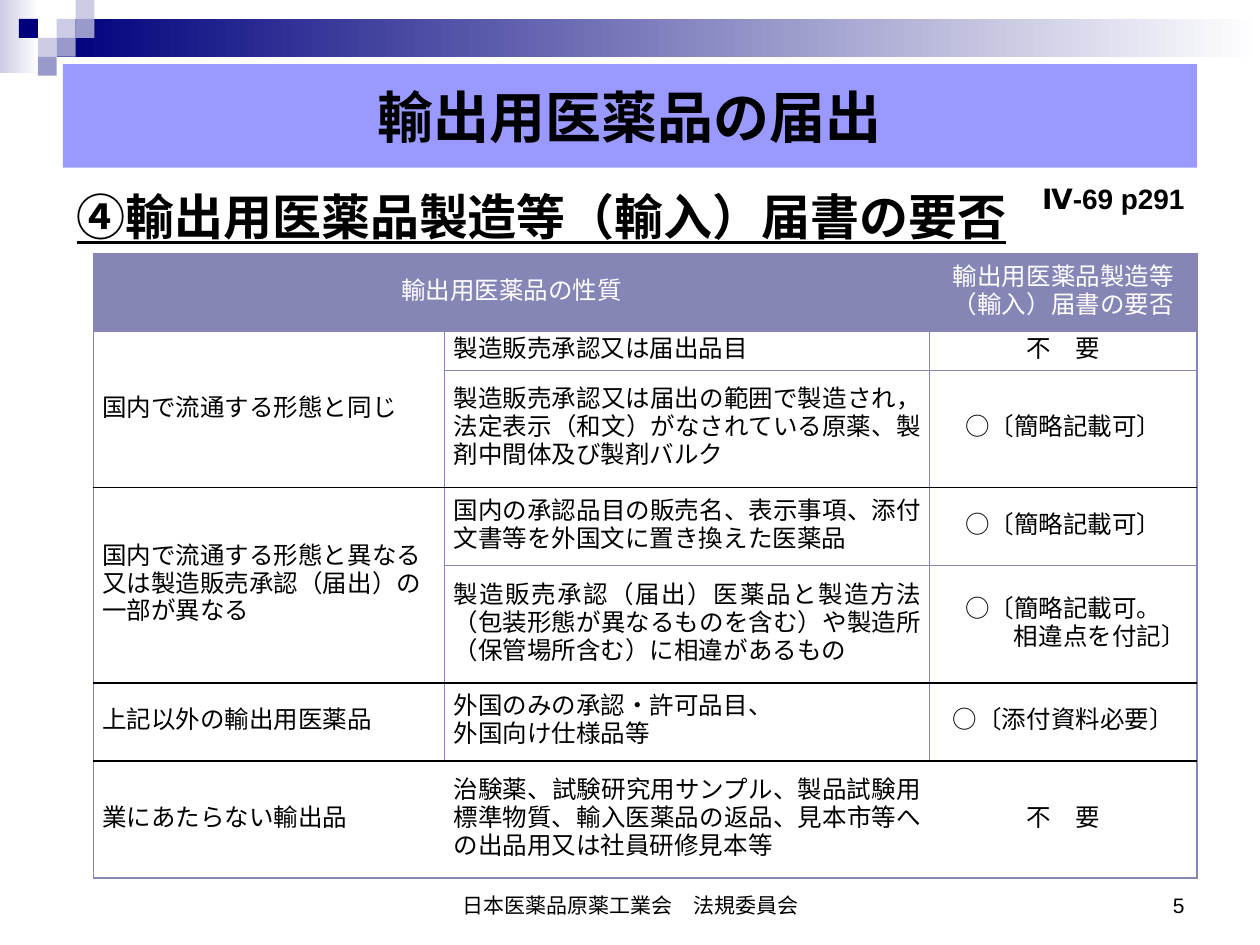
from lxml import etree
from pptx import Presentation
from pptx.dml.color import RGBColor
from pptx.enum.shapes import MSO_SHAPE as Shape
from pptx.enum.text import MSO_ANCHOR as Anchor, PP_ALIGN as Align
from pptx.oxml.ns import qn
from pptx.util import Inches, Pt

COLORS = {"navy": "00007D", "pale": "CCCCE6", "mid": "9999CC", "title": "9999FF",
          "grid": "8686B6", "black": "000000", "white": "FFFFFF"}
JP = "Noto Sans CJK JP"
LEFT, CENTER, RIGHT, JUSTIFY = Align.LEFT, Align.CENTER, Align.RIGHT, Align.JUSTIFY
ROW_HEIGHTS = [0.62, 0.31, 0.93, 0.62, 0.93, 0.62, 0.93]
COL_WIDTHS = [2.79, 3.85, 2.12]
GROUP_ENDS = (3, 5, 6)
HANGING = "相違点を付記〕"
ROWS = [
    ("輸出用医薬品の性質", "", "輸出用医薬品製造等（輸入）届書の要否"),
    ("国内で流通する形態と同じ", "製造販売承認又は届出品目", "不　要"),
    ("", "製造販売承認又は届出の範囲で製造され，法定表示（和文）がなされている原薬、製剤中間体及び製剤バルク",
     "○〔簡略記載可〕"),
    ("国内で流通する形態と異なる又は製造販売承認（届出）の一部が異なる",
     "国内の承認品目の販売名、表示事項、添付文書等を外国文に置き換えた医薬品", "○〔簡略記載可〕"),
    ("", "製造販売承認（届出）医薬品と製造方法（包装形態が異なるものを含む）や製造所（保管場所含む）に相違があるもの",
     "○〔簡略記載可。\n" + HANGING),
    ("上記以外の輸出用医薬品", "外国のみの承認・許可品目、\n外国向け仕様品等", "○〔添付資料必要〕"),
    ("業にあたらない輸出品",
     "治験薬、試験研究用サンプル、製品試験用標準物質、輸入医薬品の返品、見本市等への出品用又は社員研修見本等", "不　要"),
]


def rgb(name):
    """Return a named colour."""
    return RGBColor.from_string(COLORS[name])


def write(tf, text, size, color="black", font="Arial", bold=False, underline=False,
          align=LEFT, spacing=None, before=0):
    """Fill a text frame, one paragraph for each line of text."""
    tf.word_wrap = True
    for i, line in enumerate(text.split("\n")):
        p = tf.add_paragraph() if i else tf.paragraphs[0]
        p.alignment, p.line_spacing, p.space_before = align, spacing, Pt(before)
        r = p.add_run()
        r.text = line
        r.font.size, r.font.name = Pt(size), font
        r.font.bold, r.font.underline = bold, underline
        r.font.color.rgb = rgb(color)
        etree.SubElement(r.font._element, qn("a:ea"), typeface=JP)


def add_rect(s, x, y, w, h, color, fade=None):
    """Add a borderless rectangle, plain or fading to the right."""
    sp = s.shapes.add_shape(Shape.RECTANGLE, Inches(x), Inches(y), Inches(w), Inches(h))
    sp.shadow.inherit = False
    sp.line.fill.background()
    if fade:
        sp.fill.gradient()
        sp.fill.gradient_angle = 0
        for stop, name, pos in zip(sp.fill.gradient_stops, (color, fade), (0, 1)):
            stop.color.rgb, stop.position = rgb(name), pos
    else:
        sp.fill.solid()
        sp.fill.fore_color.rgb = rgb(color)
    return sp


def add_text(s, x, y, w, h, text, size, anchor=Anchor.TOP, **fmt):
    """Add a text box."""
    tf = s.shapes.add_textbox(Inches(x), Inches(y), Inches(w), Inches(h)).text_frame
    tf.vertical_anchor = anchor
    write(tf, text, size, **fmt)


def add_banner(s, x, y, w):
    """Draw the fading band and its checker of squares."""
    unit = 0.15
    add_rect(s, x, y, 0.31, 0.58, "pale", "white")
    add_rect(s, x + 3 * unit, y + unit, w - 3 * unit, 2 * unit, "navy", "white")
    squares = [(3, 1, "pale"), (4, 0, "pale"), (4, 1, "mid"), (2, 2, "pale"),
               (1, 1, "navy"), (3, 2, "mid"), (2, 3, "mid")]
    for col, row, color in squares:
        add_rect(s, x + col * unit, y + row * unit, unit, unit, color)


def add_heading(s, x, y, w):
    """Place the title bar, the subtitle and the page reference."""
    sp = add_rect(s, x, y, w, 0.82, "title")
    sp.text_frame.vertical_anchor = Anchor.MIDDLE
    write(sp.text_frame, "輸出用医薬品の届出", 32, bold=True, align=CENTER)
    add_text(s, x + 0.01, y + 1.01, w, 0.75, "④輸出用医薬品製造等（輸入）届書の要否", 28,
             bold=True, underline=True, spacing=0.8, before=5.6)
    add_text(s, x + w - 1.96, y + 0.93, 1.96, 0.32, "Ⅳ-69 p291", 16,
             bold=True, align=RIGHT, spacing=0.8, before=3.2)


def set_borders(cell, **sides):
    """Set the cell lines, each given as a colour name or None."""
    tc_pr = cell._tc.get_or_add_tcPr()
    for i, side in enumerate("LRTB"):
        color = sides[side]
        width = Pt(1 if color == "black" else 0.75)
        ln = etree.Element(qn("a:ln" + side), w=str(int(width)))
        if color:
            fill = etree.SubElement(ln, qn("a:solidFill"))
            etree.SubElement(fill, qn("a:srgbClr"), val=COLORS[color])
        else:
            etree.SubElement(ln, qn("a:noFill"))
        tc_pr.insert(i, ln)


def format_cell(cell, row, col, text):
    """Write one table cell with its fill and lines."""
    header, last = row == 0, row == len(ROWS) - 1
    cell.margin_left = cell.margin_right = Inches(0.07)
    cell.margin_top = cell.margin_bottom = 0
    cell.vertical_anchor = Anchor.MIDDLE
    if header:
        cell.fill.solid()
        cell.fill.fore_color.rgb = rgb("grid")
    else:
        cell.fill.background()
    if text:
        write(cell.text_frame, text, 14, "white" if header else "black", JP, spacing=Pt(16),
              align=CENTER if header else (LEFT, JUSTIFY, CENTER)[col])
    for p in cell.text_frame.paragraphs:
        if p.text == HANGING:
            p._p.get_or_add_pPr().set("marL", str(int(Inches(0.58))))
    top, bottom = ("black" if edge in GROUP_ENDS else "grid" for edge in (row, row + 1))
    if col == 0 and row in (1, 3):
        bottom = None
    if col == 0 and row in (2, 4):
        top = None
    set_borders(cell, L=None if last and col > 0 else "grid",
                R=None if last and col < 2 else "grid", T=top, B=bottom)


def add_requirements(s, x, y):
    """Build the table of notification requirements."""
    tbl = s.shapes.add_table(len(ROWS), len(COL_WIDTHS), Inches(x), Inches(y),
                             Inches(sum(COL_WIDTHS)), Inches(sum(ROW_HEIGHTS))).table
    tbl.first_row = tbl.horz_banding = False
    for col, width in zip(tbl.columns, COL_WIDTHS):
        col.width = Inches(width)
    for i, (height, texts) in enumerate(zip(ROW_HEIGHTS, ROWS)):
        tbl.rows[i].height = Inches(height)
        for j, text in enumerate(texts):
            format_cell(tbl.cell(i, j), i, j, text)
    for start, end in (((0, 0), (0, 1)), ((1, 0), (2, 0)), ((3, 0), (4, 0))):
        tbl.cell(*start).merge(tbl.cell(*end))


def add_footer(s, y):
    """Place the organisation name and the page number."""
    add_text(s, 3.42, y, 3.17, 0.5, "日本医薬品原薬工業会　法規委員会", 12, Anchor.BOTTOM, align=CENTER)
    add_text(s, 7.17, y, 2.33, 0.5, "5", 12, Anchor.BOTTOM, align=RIGHT)


def main():
    """Build and save the slide."""
    prs = Presentation()
    prs.slide_width, prs.slide_height = Inches(10), Inches(7.5)
    s = prs.slides.add_slide(prs.slide_layouts[6])
    add_banner(s, 0, 0, 10)
    add_footer(s, 6.83)
    add_heading(s, 0.5, 0.51, 9)
    add_requirements(s, 0.74, 2.01)
    prs.save("out.pptx")


if __name__ == "__main__":
    main()
